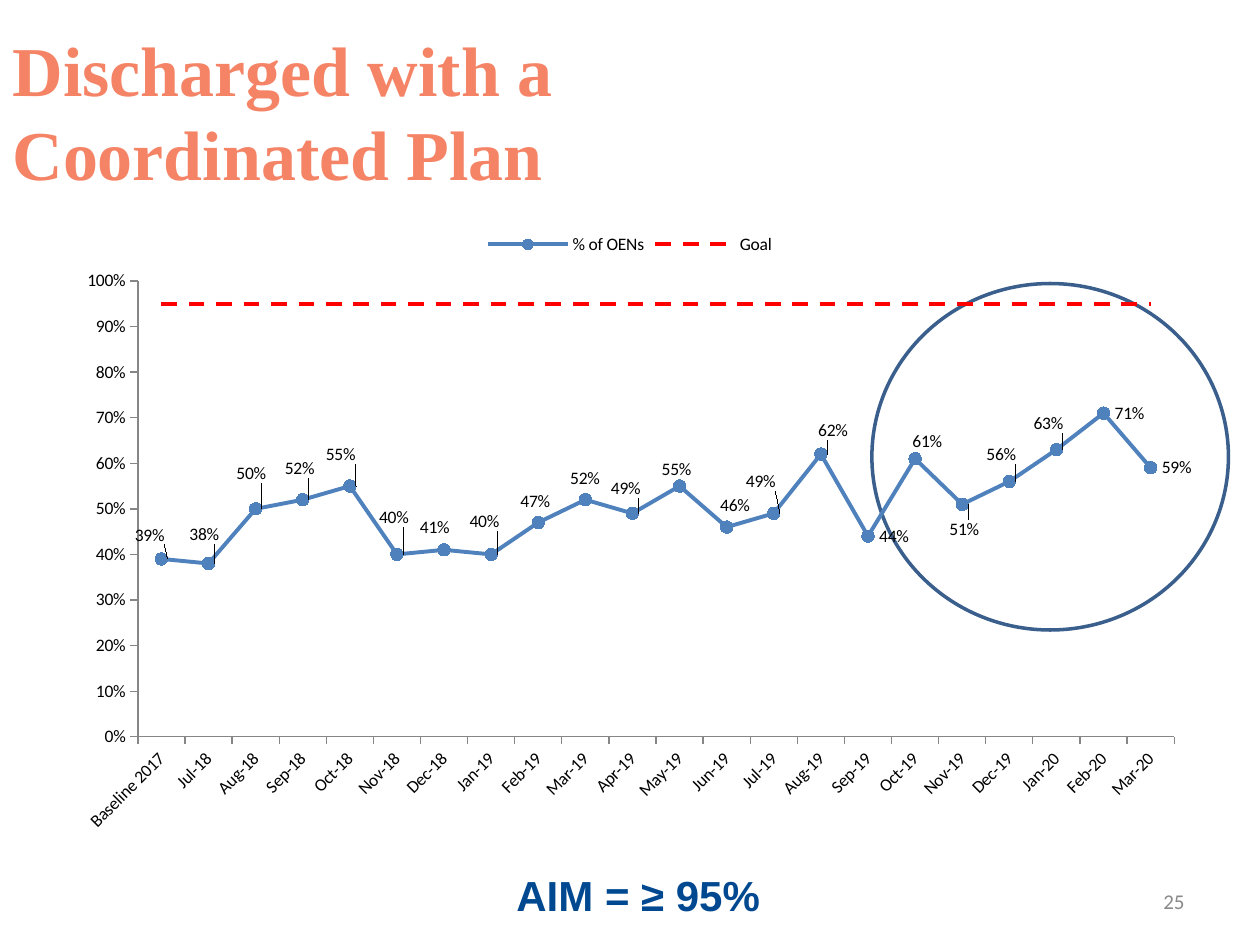
from lxml import etree
from pptx import Presentation
from pptx.chart.data import CategoryChartData
from pptx.dml.color import RGBColor
from pptx.enum.chart import (XL_CHART_TYPE, XL_LABEL_POSITION, XL_LEGEND_POSITION,
                             XL_MARKER_STYLE, XL_TICK_MARK)
from pptx.enum.dml import MSO_LINE
from pptx.enum.shapes import MSO_SHAPE
from pptx.enum.text import MSO_ANCHOR, MSO_AUTO_SIZE, PP_ALIGN
from pptx.oxml import parse_xml
from pptx.oxml.ns import nsdecls, qn
from pptx.util import Inches, Pt

LINE_MARKERS = XL_CHART_TYPE.LINE_MARKERS
LABEL_RIGHT = XL_LABEL_POSITION.RIGHT
LEGEND_TOP = XL_LEGEND_POSITION.TOP
CIRCLE, NO_MARKER = XL_MARKER_STYLE.CIRCLE, XL_MARKER_STYLE.NONE
TICK_OUT = XL_TICK_MARK.OUTSIDE
DASH = MSO_LINE.DASH
OVAL = MSO_SHAPE.OVAL
MIDDLE, TOP = MSO_ANCHOR.MIDDLE, MSO_ANCHOR.TOP
NO_AUTOFIT = MSO_AUTO_SIZE.NONE
LEFT, RIGHT = PP_ALIGN.LEFT, PP_ALIGN.RIGHT

# Content
TITLE = "Discharged with a Coordinated Plan"
AIM = "AIM = ≥ 95%"
PAGE = "25"
MONTHS = ["Baseline 2017",
          "Jul-18", "Aug-18", "Sep-18", "Oct-18", "Nov-18", "Dec-18",
          "Jan-19", "Feb-19", "Mar-19", "Apr-19", "May-19", "Jun-19",
          "Jul-19", "Aug-19", "Sep-19", "Oct-19", "Nov-19", "Dec-19",
          "Jan-20", "Feb-20", "Mar-20"]
RATES = [0.39, 0.38, 0.5, 0.52, 0.55, 0.4, 0.41, 0.4, 0.47, 0.52, 0.49,
         0.55, 0.46, 0.49, 0.62, 0.44, 0.61, 0.51, 0.56, 0.63, 0.71, 0.59]
GOAL = 0.95

# Label centres relative to their points, in inches; None stays at the right
LABEL_SHIFTS = [(-0.09, -0.19), (-0.03, -0.23), (-0.03, -0.28), (-0.02, -0.25),
                (-0.07, -0.25), (-0.02, -0.29), (-0.07, -0.18), (-0.05, -0.26),
                (-0.02, -0.17), (0, -0.17), (-0.05, -0.2), (-0.02, -0.13),
                (0.07, -0.17), (-0.1, -0.25), (0.1, -0.19), None,
                (0.1, -0.14), (0.02, 0.2), (-0.06, -0.21), (-0.06, -0.21),
                None, None]
RIGHT_LABEL_CENTRE = 0.21

THEME = {
    "title": ("Times New Roman", 40, "F58466", True),
    "aim": ("Arial", 24, "004990", True),
    "page": ("Calibri", 12, "898989", False),
    "chart": ("Calibri", 10, "000000", False),
    "rate": "4F81BD", "goal": "FF0000", "ring": "3A5F8C", "axis": "868686",
}

# Places: left, top, width, height
TITLE_BOX = (0, 0.25, 6.58, 1.25)
AIM_BOX = (4, 6.85, 2.46, 0.5)
PAGE_BOX = (7.17, 6.95, 2.33, 0.4)
RING_BOX = (6.92, 2.25, 2.83, 2.75)
CHART_BOX = (0.5, 1.75, 9, 4.95)
PLOT_BOX = (1.09, 2.23, 8.23, 3.62)


def inches(box):
    return [Inches(length) for length in box]


def style_font(font, role):
    name, size, color, bold = THEME[role]
    font.name, font.size, font.bold = name, Pt(size), bold
    font.color.rgb = RGBColor.from_string(color)


def style_line(line, color, width):
    line.color.rgb = RGBColor.from_string(THEME[color])
    line.width = Pt(width)


def write(shape, text, role, align, anchor):
    frame = shape.text_frame
    frame.word_wrap = True
    frame.auto_size = NO_AUTOFIT
    frame.vertical_anchor = anchor
    paragraph = frame.paragraphs[0]
    paragraph.text = text
    paragraph.alignment = align
    style_font(paragraph.font, role)


def manual_layout(**parts):
    layout = parse_xml(f"<c:layout {nsdecls('c')}><c:manualLayout/></c:layout>")
    for tag, value in parts.items():
        etree.SubElement(layout[0], qn(f"c:{tag}")).set("val", str(value))
    return layout


def place_plot(chart):
    left, top, width, height = CHART_BOX
    x, y, w, h = PLOT_BOX
    plot_area = chart.plots[0]._element.getparent()
    for old in plot_area.findall(qn("c:layout")):
        plot_area.remove(old)
    plot_area.insert(0, manual_layout(
        layoutTarget="inner", xMode="edge", yMode="edge",
        x=round((x - left) / width, 3), y=round((y - top) / height, 3),
        w=round(w / width, 3), h=round(h / height, 3)))


def label_rates(series):
    labels = series.data_labels
    labels.show_value = True
    labels.number_format, labels.number_format_is_linked = "0%", False
    labels.position = LABEL_RIGHT
    style_font(labels.font, "chart")
    for index, shift in enumerate(LABEL_SHIFTS):
        if shift:
            series.points[index].data_label.position = LABEL_RIGHT
    for label in series._element.iter(qn("c:dLbl")):
        index = label.find(qn("c:idx"))
        dx, dy = LABEL_SHIFTS[int(index.get("val"))]
        index.addnext(manual_layout(
            x=round((dx - RIGHT_LABEL_CENTRE) / CHART_BOX[2], 4),
            y=round(dy / CHART_BOX[3], 4)))


prs = Presentation()
prs.slide_width, prs.slide_height = Inches(10), Inches(7.5)
slide = prs.slides.add_slide(prs.slide_layouts[5])

# Title, page number and aim
title = slide.shapes.title
title.left, title.top, title.width, title.height = inches(TITLE_BOX)
write(title, TITLE, "title", LEFT, MIDDLE)
write(slide.shapes.add_textbox(*inches(PAGE_BOX)), PAGE, "page", RIGHT, MIDDLE)
write(slide.shapes.add_textbox(*inches(AIM_BOX)), AIM, "aim", LEFT, TOP)

# Ring around the latest months
ring = slide.shapes.add_shape(OVAL, *inches(RING_BOX))
ring.shadow.inherit = False
ring.fill.background()
style_line(ring.line, "ring", 2)

# Chart
chart_data = CategoryChartData(number_format="0%")
chart_data.categories = MONTHS
chart_data.add_series("% of OENs", RATES)
chart_data.add_series("Goal", [GOAL] * len(MONTHS))
chart = slide.shapes.add_chart(LINE_MARKERS, *inches(CHART_BOX), chart_data).chart
style_font(chart.font, "chart")
chart.has_title = False
chart.has_legend = True
chart.legend.position = LEGEND_TOP
chart.legend.include_in_layout = False
chart.plots[0].vary_by_categories = False
place_plot(chart)

# Axes
months, percent = chart.category_axis, chart.value_axis
for axis in (months, percent):
    axis.has_major_gridlines = False
    axis.major_tick_mark = TICK_OUT
    style_line(axis.format.line, "axis", 0.75)
    style_font(axis.tick_labels.font, "chart")
months._element.find(f"{qn('c:txPr')}/{qn('a:bodyPr')}").set("rot", "-2700000")
percent.minimum_scale, percent.maximum_scale, percent.major_unit = 0, 1, 0.1
percent.tick_labels.number_format = "0%"
percent.tick_labels.number_format_is_linked = False

# Series
rate, goal = chart.plots[0].series
for series, color in ((rate, "rate"), (goal, "goal")):
    series.smooth = False
    style_line(series.format.line, color, 2.25)
goal.format.line.dash_style = DASH
goal.marker.style = NO_MARKER
rate.marker.style, rate.marker.size = CIRCLE, 7
rate.marker.format.fill.solid()
rate.marker.format.fill.fore_color.rgb = RGBColor.from_string(THEME["rate"])
style_line(rate.marker.format.line, "rate", 0.75)
label_rates(rate)

prs.save("out.pptx")
